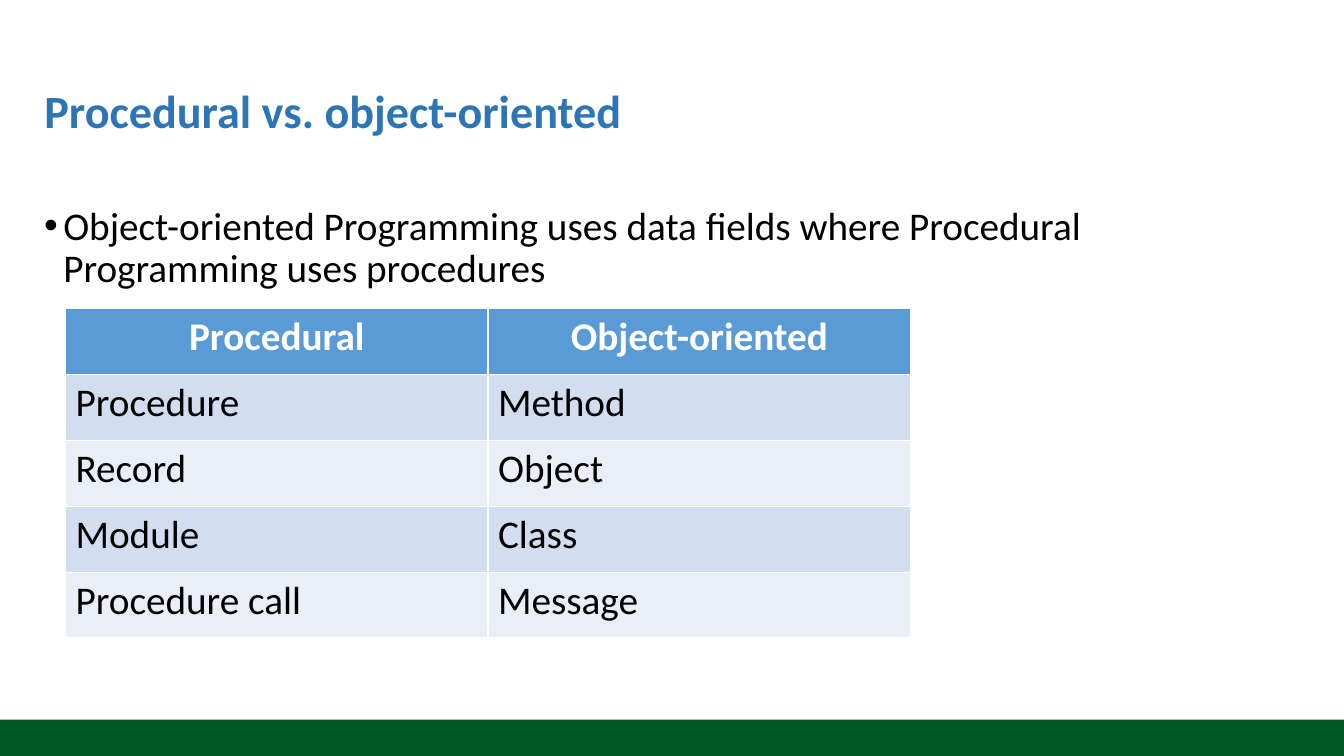
from dataclasses import dataclass

from lxml import etree
from pptx import Presentation
from pptx.dml.color import RGBColor
from pptx.enum.shapes import MSO_SHAPE
from pptx.enum.text import MSO_ANCHOR, MSO_AUTO_SIZE, PP_ALIGN
from pptx.oxml.ns import qn
from pptx.slide import Slide
from pptx.util import Emu, Inches, Pt

RECTANGLE = MSO_SHAPE.RECTANGLE
MIDDLE = MSO_ANCHOR.MIDDLE
NO_AUTOFIT = MSO_AUTO_SIZE.NONE
LEFT, CENTER = PP_ALIGN.LEFT, PP_ALIGN.CENTER
SLIDE_WIDTH, SLIDE_HEIGHT = Inches(13.33), Inches(7.5)
TITLE_ONLY_LAYOUT = 5


@dataclass(frozen=True)
class Theme:
    font: str = "Calibri"
    title_size: float = 33
    body_size: float = 28
    line_spacing: float = 0.9
    title: str = "2E75B6"
    text: str = "000000"
    header_text: str = "FFFFFF"
    header_fill: str = "5B9BD5"
    bands: tuple[str, str] = ("D2DEEF", "EAEFF7")
    footer: str = "015A22"


@dataclass(frozen=True)
class Area:
    """A rectangle in percent of the slide's width and height."""
    left: float
    top: float
    width: float
    height: float

    def lengths(self) -> tuple[Emu, Emu, Emu, Emu]:
        return (Emu(round(SLIDE_WIDTH * self.left / 100)),
                Emu(round(SLIDE_HEIGHT * self.top / 100)),
                Emu(round(SLIDE_WIDTH * self.width / 100)),
                Emu(round(SLIDE_HEIGHT * self.height / 100)))


@dataclass(frozen=True)
class Comparison:
    procedural: str
    object_oriented: str


THEME = Theme()
TITLE_AREA = Area(2.55, 5.33, 95.12, 19.33)
BODY_AREA = Area(2.55, 26.67, 95.12, 72)
TABLE_AREA = Area(4.88, 40.8, 62.87, 43.6)
FOOTER_AREA = Area(0, 95.2, 100, 4.8)

COMPARISONS = [
    Comparison("Procedural", "Object-oriented"),
    Comparison("Procedure", "Method"),
    Comparison("Record", "Object"),
    Comparison("Module", "Class"),
    Comparison("Procedure call", "Message"),
]


def format_paragraph(paragraph, size: float, color: str, bold: bool = False,
                     alignment=LEFT) -> None:
    paragraph.alignment = alignment
    font = paragraph.font
    font.name, font.size, font.bold = THEME.font, Pt(size), bold
    font.color.rgb = RGBColor.from_string(color)


def add_footer(slide: Slide) -> None:
    shape = slide.shapes.add_shape(RECTANGLE, *FOOTER_AREA.lengths())
    shape.shadow.inherit = False
    shape.fill.solid()
    shape.fill.fore_color.rgb = RGBColor.from_string(THEME.footer)
    shape.line.fill.background()


def set_title(slide: Slide, text: str) -> None:
    title = slide.shapes.title
    title.left, title.top, title.width, title.height = TITLE_AREA.lengths()
    frame = title.text_frame
    frame.text = text
    frame.vertical_anchor = MIDDLE
    frame.auto_size = NO_AUTOFIT
    paragraph = frame.paragraphs[0]
    paragraph.line_spacing = THEME.line_spacing
    format_paragraph(paragraph, THEME.title_size, THEME.title, bold=True)


def add_bullet_text(slide: Slide, text: str) -> None:
    frame = slide.shapes.add_textbox(*BODY_AREA.lengths()).text_frame
    frame.word_wrap = True
    frame.text = text
    paragraph = frame.paragraphs[0]
    paragraph.line_spacing = THEME.line_spacing
    properties = paragraph._p.get_or_add_pPr()
    indent = Inches(0.19)
    properties.set("marL", str(indent))
    properties.set("indent", str(-indent))
    etree.SubElement(properties, qn("a:buFont")).set("typeface", "Arial")
    etree.SubElement(properties, qn("a:buChar")).set("char", "•")
    format_paragraph(paragraph, THEME.body_size, THEME.text)


def fill_cell(cell, text: str, row: int) -> None:
    is_header = row == 0
    cell.text = text
    cell.fill.solid()
    fill = THEME.header_fill if is_header else THEME.bands[(row - 1) % 2]
    cell.fill.fore_color.rgb = RGBColor.from_string(fill)
    format_paragraph(cell.text_frame.paragraphs[0], THEME.body_size,
                     THEME.header_text if is_header else THEME.text,
                     bold=is_header, alignment=CENTER if is_header else LEFT)


def add_comparison_table(slide: Slide, comparisons: list[Comparison]) -> None:
    table = slide.shapes.add_table(len(comparisons), 2,
                                   *TABLE_AREA.lengths()).table
    for row, comparison in enumerate(comparisons):
        fill_cell(table.cell(row, 0), comparison.procedural, row)
        fill_cell(table.cell(row, 1), comparison.object_oriented, row)


def main() -> None:
    presentation = Presentation()
    presentation.slide_width = SLIDE_WIDTH
    presentation.slide_height = SLIDE_HEIGHT
    layout = presentation.slide_layouts[TITLE_ONLY_LAYOUT]
    slide = presentation.slides.add_slide(layout)

    # Footer band and title
    add_footer(slide)
    set_title(slide, "Procedural vs. object-oriented")

    # Statement and the table of matching terms
    add_bullet_text(slide, "Object-oriented Programming uses data fields where "
                           "Procedural Programming uses procedures")
    add_comparison_table(slide, COMPARISONS)

    presentation.save("out.pptx")


if __name__ == "__main__":
    main()
